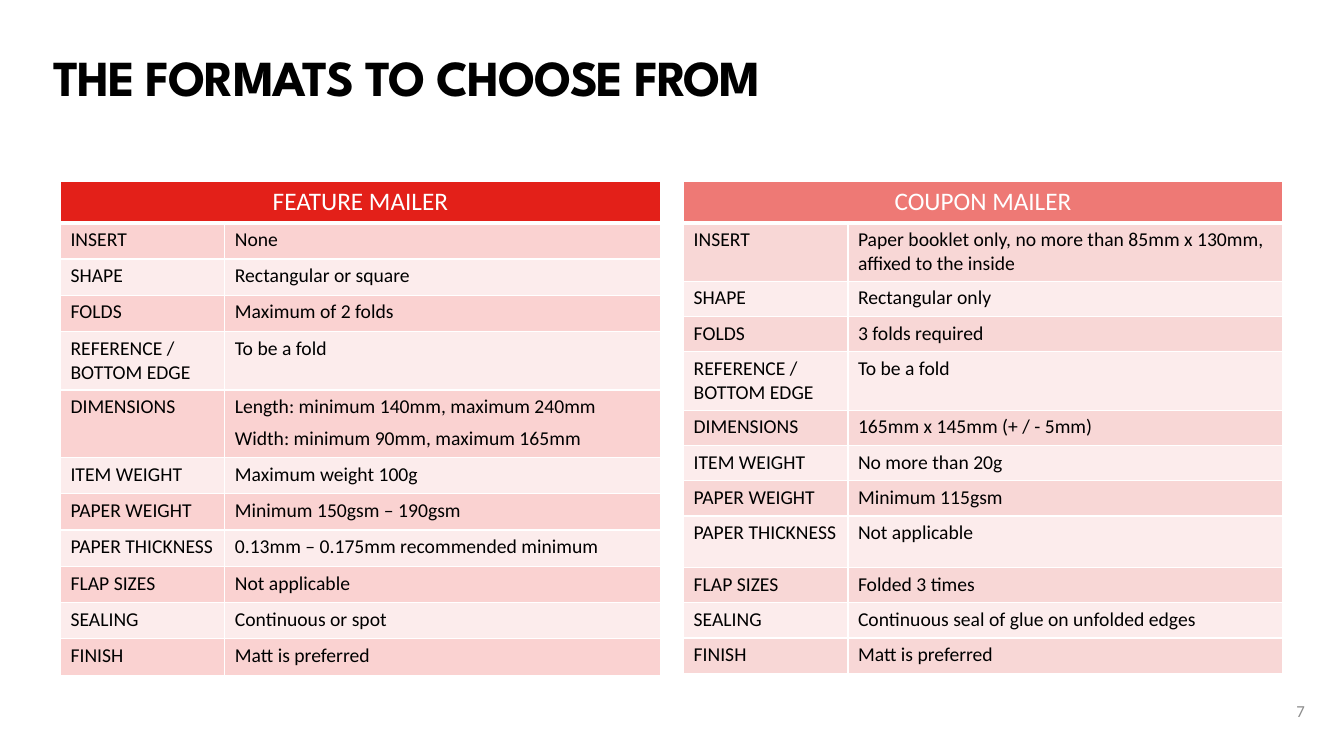
from dataclasses import dataclass

from lxml.etree import SubElement
from pptx import Presentation
from pptx.dml.color import RGBColor
from pptx.enum.text import MSO_ANCHOR, PP_ALIGN
from pptx.oxml.ns import qn
from pptx.util import Inches, Pt


@dataclass(frozen=True)
class Theme:
    title_font: str = "League Spartan"
    body_font: str = "Calibri"
    title_size: int = 36
    header_size: int = 18
    cell_size: int = 14
    number_size: int = 12
    ink: str = "000000"
    white: str = "FFFFFF"
    grey: str = "8C8C8C"
    light_band: str = "FCECEC"
    feature_header: str = "E32019"
    feature_band: str = "FAD2D1"
    coupon_header: str = "EE7975"
    coupon_band: str = "F8D7D6"


THEME = Theme()

LABELS = ["INSERT", "SHAPE", "FOLDS", "REFERENCE / BOTTOM EDGE", "DIMENSIONS",
          "ITEM WEIGHT", "PAPER WEIGHT", "PAPER THICKNESS", "FLAP SIZES",
          "SEALING", "FINISH"]
FEATURE_VALUES = [
    "None", "Rectangular or square", "Maximum of 2 folds", "To be a fold",
    "Length: minimum 140mm, maximum 240mm\nWidth: minimum 90mm, maximum 165mm",
    "Maximum weight 100g", "Minimum 150gsm – 190gsm",
    "0.13mm – 0.175mm recommended minimum", "Not applicable",
    "Continuous or spot", "Matt is preferred"]
COUPON_VALUES = [
    "Paper booklet only, no more than 85mm x 130mm, affixed to the inside",
    "Rectangular only", "3 folds required", "To be a fold",
    "165mm x 145mm (+ / - 5mm)", "No more than 20g", "Minimum 115gsm",
    "Not applicable", "Folded 3 times",
    "Continuous seal of glue on unfolded edges", "Matt is preferred"]
HEADER_HEIGHT = 0.41
LABEL_WIDTH = 1.63


def write_text(frame, text, size=THEME.cell_size, color=THEME.ink,
               font=THEME.body_font, bold=False, align=PP_ALIGN.LEFT,
               line_spacing=None, space_after=0, tracking=None):
    """Fill a text frame, one paragraph for each line of the text."""
    frame.word_wrap = True
    for index, line in enumerate(text.split("\n")):
        para = frame.add_paragraph() if index else frame.paragraphs[0]
        para.alignment = align
        para.space_after = Pt(space_after)
        if line_spacing:
            para.line_spacing = Pt(line_spacing)
        span = para.add_run()
        span.text = line
        span.font.name = font
        span.font.size = Pt(size)
        span.font.bold = bold
        span.font.color.rgb = RGBColor.from_string(color)
        if tracking:
            span.font._element.set("spc", str(int(tracking * 100)))


def add_text_box(page, left, top, width, height, text, margin=None,
                 anchor=MSO_ANCHOR.TOP, **text_format):
    box = page.shapes.add_textbox(Inches(left), Inches(top),
                                  Inches(width), Inches(height))
    frame = box.text_frame
    frame.vertical_anchor = anchor
    if margin is not None:
        frame.margin_left = frame.margin_right = Inches(margin)
        frame.margin_top = frame.margin_bottom = Inches(margin)
    write_text(frame, text, **text_format)


def style_cell(cell, fill, bottom=1):
    """Draw white borders, then the fill, which must follow them in the XML."""
    properties = cell._tc.get_or_add_tcPr()
    for side, weight in (("L", 1), ("R", 1), ("T", 1), ("B", bottom)):
        border = SubElement(properties, qn(f"a:ln{side}"), w=str(Pt(weight)))
        paint = SubElement(border, qn("a:solidFill"))
        SubElement(paint, qn("a:srgbClr"), val=THEME.white)
    cell.fill.solid()
    cell.fill.fore_color.rgb = RGBColor.from_string(fill)


def add_format_table(page, left, top, width, heading, values, header_fill,
                     band_fill, row_height, tall_rows):
    """Place one mailer table; tall_rows maps labels to their own heights."""
    heights = [HEADER_HEIGHT] + [tall_rows.get(label, row_height) for label in LABELS]
    holder = page.shapes.add_table(len(heights), 2, Inches(left), Inches(top),
                                   Inches(width), Inches(sum(heights)))
    table = holder.table
    table.first_row = table.horz_banding = False
    table.columns[0].width = Inches(LABEL_WIDTH)
    table.columns[1].width = Inches(width - LABEL_WIDTH)
    for row, height in zip(table.rows, heights):
        row.height = Inches(height)

    # Heading across both columns
    header = table.cell(0, 0)
    header.merge(table.cell(0, 1))
    for column in range(2):
        style_cell(table.cell(0, column), header_fill, bottom=3)
    write_text(header.text_frame, heading, size=THEME.header_size,
               color=THEME.white, align=PP_ALIGN.CENTER)

    # Banded body rows
    for number, row_texts in enumerate(zip(LABELS, values), start=1):
        fill = band_fill if number % 2 else THEME.light_band
        for column, text in enumerate(row_texts):
            cell = table.cell(number, column)
            style_cell(cell, fill)
            write_text(cell.text_frame, text, space_after=6 * column)


def build_formats_page(deck):
    page = deck.slides.add_slide(deck.slide_layouts[6])

    # Title
    add_text_box(page, 0.53, 0.45, 11.01, 0.52, "THE FORMATS TO CHOOSE FROM",
                 margin=0, size=THEME.title_size, font=THEME.title_font,
                 bold=True, line_spacing=44, tracking=-1)

    # Page number
    add_text_box(page, 12.63, 6.85, 0.41, 0.4, "7", anchor=MSO_ANCHOR.MIDDLE,
                 size=THEME.number_size, color=THEME.grey, align=PP_ALIGN.RIGHT)

    # Mailer tables
    add_format_table(page, 6.78, 1.8, 5.94, "COUPON MAILER", COUPON_VALUES,
                     THEME.coupon_header, THEME.coupon_band, 0.35,
                     {"INSERT": 0.58, "REFERENCE / BOTTOM EDGE": 0.58,
                      "PAPER THICKNESS": 0.51})
    add_format_table(page, 0.6, 1.8, 5.95, "FEATURE MAILER", FEATURE_VALUES,
                     THEME.feature_header, THEME.feature_band, 0.36,
                     {"REFERENCE / BOTTOM EDGE": 0.58, "DIMENSIONS": 0.67})


def main():
    deck = Presentation()
    deck.slide_width = Inches(13.33)
    deck.slide_height = Inches(7.5)
    build_formats_page(deck)
    deck.save("out.pptx")


if __name__ == "__main__":
    main()
